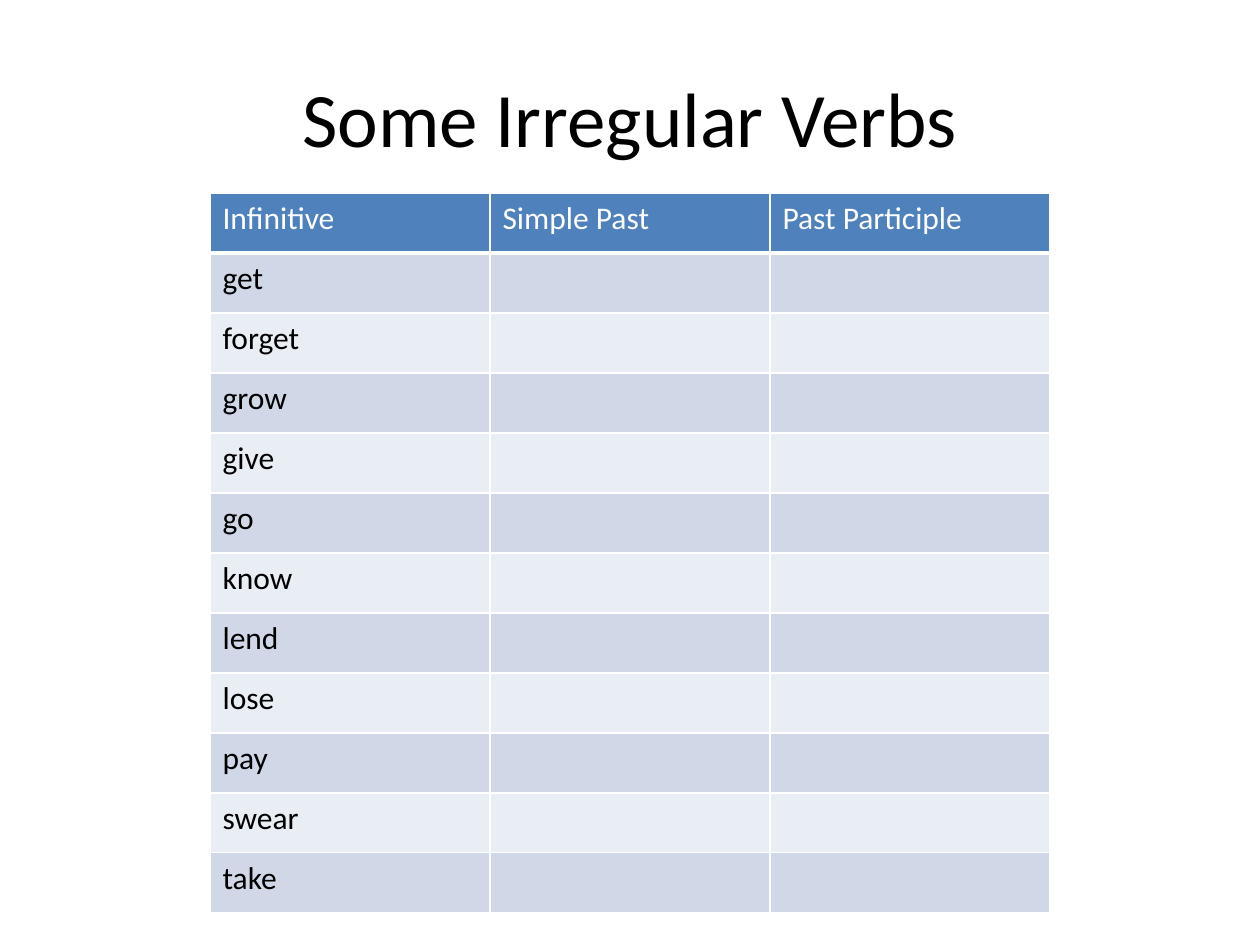
from lxml.etree import SubElement
from pptx import Presentation
from pptx.dml.color import RGBColor
from pptx.enum.text import MSO_ANCHOR, PP_ALIGN
from pptx.oxml.ns import qn
from pptx.util import Emu, Pt

COLORS = {"head": "4F81BD", "odd": "D0D8E8", "even": "E9EDF4", "white": "FFFFFF", "black": "000000"}
HEADERS = ["Infinitive", "Simple Past", "Past Participle"]
VERBS = ["get", "forget", "grow", "give", "go", "know", "lend", "lose", "pay", "swear", "take"]
COL_W, ROW_H = 280, 60


def px(n):
    return Emu(round(n * 914400 / 126))


def write(p, text, size, color):
    r = p.add_run()
    r.text = text
    for name, value in {"name": "Calibri", "size": Pt(size), "bold": False}.items():
        setattr(r.font, name, value)
    r.font.color.rgb = RGBColor.from_string(COLORS[color])


prs = Presentation()
prs.slide_width, prs.slide_height = px(1260), px(945)
s = prs.slides.add_slide(prs.slide_layouts[6])

sp = s.shapes.add_textbox(px(63), px(38), px(1134), px(158))
tf = sp.text_frame
for name, value in {"word_wrap": True, "vertical_anchor": MSO_ANCHOR.MIDDLE}.items():
    setattr(tf, name, value)
p = tf.paragraphs[0]
p.alignment = PP_ALIGN.CENTER
write(p, "Some Irregular Verbs", 44, "black")

rows = [HEADERS] + [[verb, "", ""] for verb in VERBS]
tbl = s.shapes.add_table(len(rows), len(HEADERS), px(210), px(193),
                         px(COL_W * len(HEADERS)), px(ROW_H * len(rows))).table
for col in tbl.columns:
    col.width = px(COL_W)
for i, row in enumerate(rows):
    tbl.rows[i].height = px(ROW_H)
    fill = "head" if i == 0 else "odd" if i % 2 else "even"
    for j, text in enumerate(row):
        cell = tbl.cell(i, j)
        tcPr = cell._tc.get_or_add_tcPr()
        for side in ("lnL", "lnR", "lnT", "lnB"):
            width = 3 if i == 0 and side == "lnB" else 1
            ln = SubElement(tcPr, qn("a:" + side), w=str(Pt(width)))
            SubElement(SubElement(ln, qn("a:solidFill")), qn("a:srgbClr"), val=COLORS["white"])
        cell.fill.solid()
        cell.fill.fore_color.rgb = RGBColor.from_string(COLORS[fill])
        if text:
            write(cell.text_frame.paragraphs[0], text, 18, "black" if i else "white")

prs.save("out.pptx")
